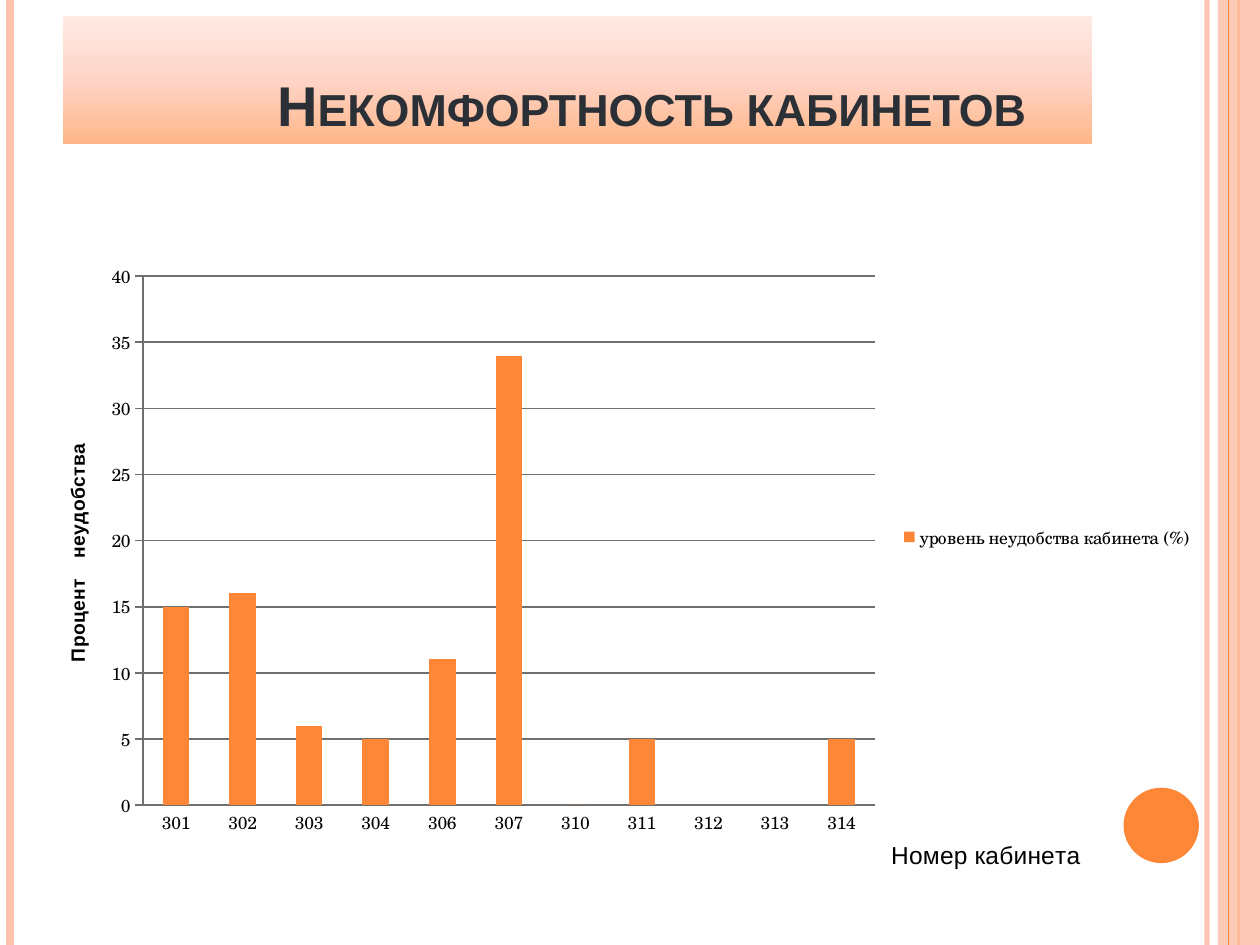
from copy import deepcopy
from dataclasses import dataclass
from typing import Optional

from lxml import etree
from pptx import Presentation
from pptx.chart.data import CategoryChartData
from pptx.dml.color import RGBColor
from pptx.enum.chart import XL_CHART_TYPE, XL_LEGEND_POSITION, XL_TICK_MARK
from pptx.enum.shapes import MSO_CONNECTOR, MSO_SHAPE
from pptx.enum.text import MSO_ANCHOR, PP_ALIGN
from pptx.oxml import parse_xml
from pptx.oxml.ns import nsdecls, qn
from pptx.util import Cm, Pt

COLUMNS = XL_CHART_TYPE.COLUMN_CLUSTERED
LEGEND_RIGHT = XL_LEGEND_POSITION.RIGHT
TICK_NONE, TICK_CROSS = XL_TICK_MARK.NONE, XL_TICK_MARK.CROSS
STRAIGHT = MSO_CONNECTOR.STRAIGHT
RECTANGLE, OVAL = MSO_SHAPE.RECTANGLE, MSO_SHAPE.OVAL
BOTTOM, CENTER = MSO_ANCHOR.BOTTOM, PP_ALIGN.CENTER
SLIDE_WIDTH, SLIDE_HEIGHT = 25.4, 19.05


@dataclass(frozen=True)
class Theme:
    accent: str = "FE8637"
    pale: str = "FEC3AE"
    heading: str = "2B2F36"
    ink: str = "000000"
    axis: str = "6F6F6F"
    banner: tuple = ((0, "FEB687"), (0.5, "FFD4C7"), (1, "FFEAE4"))
    heading_font: str = "Arial"
    chart_font: str = "TeX Gyre Schola"
    heading_size: int = 32
    chart_size: int = 10
    category_title_size: int = 14
    value_title_size: int = 11


@dataclass(frozen=True)
class Stripe:
    x: float
    color: str
    width: float
    opacity: Optional[int] = None


@dataclass(frozen=True)
class Block:
    kind: int
    left: float
    top: float
    width: float
    height: float
    color: str
    opacity: Optional[int] = None


THEME = Theme()
STRIPES_BEHIND = (
    Stripe(24.33, THEME.pale, 3, 93),
    Stripe(0.2, THEME.pale, 4.5),
    Stripe(24.97, THEME.accent, 1.5),
)
SIDE_BAND = Block(RECTANGLE, 24.55, 0, 0.85, SLIDE_HEIGHT, THEME.pale, 87)
STRIPE_IN_FRONT = Stripe(24.77, THEME.accent, 0.75)
CORNER_CIRCLE = Block(OVAL, 22.65, 15.88, 1.52, 1.52, THEME.accent)
BANNER = Block(RECTANGLE, 1.27, 0.32, 20.75, 2.59, THEME.pale)

DISCOMFORT = {
    "301": 15, "302": 16, "303": 6, "304": 5, "306": 11, "307": 34,
    "310": 0, "311": 5, "312": None, "313": None, "314": 5,
}


def apply_format(target, values: dict) -> None:
    for name, value in values.items():
        setattr(target, name, value)


def format_font(font, name: str, size: float, color: str, bold: bool = False) -> None:
    apply_format(font, {"name": name, "size": Pt(size), "bold": bold})
    font.color.rgb = RGBColor.from_string(color)


def set_opacity(element, percent: Optional[int]) -> None:
    if percent is not None:
        color = next(element.iter(qn("a:srgbClr")))
        etree.SubElement(color, qn("a:alpha"), val=str(percent * 1000))


def draw_stripe(slide, stripe: Stripe) -> None:
    x = Cm(stripe.x)
    connector = slide.shapes.add_connector(STRAIGHT, x, 0, x, Cm(SLIDE_HEIGHT))
    connector.line.color.rgb = RGBColor.from_string(stripe.color)
    connector.line.width = Pt(stripe.width)
    properties = connector._element.spPr
    set_opacity(properties, stripe.opacity)
    etree.SubElement(properties, qn("a:effectLst"))


def draw_block(slide, block: Block):
    box = (Cm(length) for length in (block.left, block.top, block.width, block.height))
    shape = slide.shapes.add_shape(block.kind, *box)
    shape.shadow.inherit = False
    shape.fill.solid()
    shape.fill.fore_color.rgb = RGBColor.from_string(block.color)
    set_opacity(shape._element.spPr, block.opacity)
    shape.line.fill.background()
    return shape


def draw_banner(slide) -> None:
    shape = draw_block(slide, BANNER)
    shape.fill.gradient()
    shape.fill.gradient_angle = 90
    stop_list = next(shape._element.spPr.iter(qn("a:gsLst")))
    stop_list.append(deepcopy(stop_list[0]))
    for stop, (position, color) in zip(shape.fill.gradient_stops, THEME.banner):
        stop.position = position
        stop.color.rgb = RGBColor.from_string(color)
    apply_format(shape.text_frame, {
        "word_wrap": True, "vertical_anchor": BOTTOM, "margin_left": Cm(3.23),
    })
    paragraph = shape.text_frame.paragraphs[0]
    paragraph.alignment = CENTER
    run = paragraph.add_run()
    run.text = "Некомфортность кабинетов"
    format_font(run.font, THEME.heading_font, THEME.heading_size, THEME.heading, True)
    run.font._element.set("cap", "small")


def place(parent, x: float, y: float, size: Optional[tuple] = None) -> None:
    """Fix the position of a chart part as fractions of the chart area."""
    for old in parent.findall(qn("c:layout")):
        parent.remove(old)
    entries = [("xMode", "edge"), ("yMode", "edge"), ("x", x), ("y", y)]
    if size:
        entries.insert(0, ("layoutTarget", "inner"))
        entries += zip("wh", size)
    body = "".join(f'<c:{tag} val="{value}"/>' for tag, value in entries)
    layout = parse_xml(f'<c:layout {nsdecls("c")}><c:manualLayout>{body}'
                       '</c:manualLayout></c:layout>')
    text = parent.find(qn("c:tx"))
    parent.insert(0 if text is None else parent.index(text) + 1, layout)


def title_axis(axis, words: list, size: float, bold: bool, x: float, y: float) -> None:
    """Write an axis title, with a widened gap between its words."""
    paragraph = axis.axis_title.text_frame.paragraphs[0]
    for index, word in enumerate(words):
        run = paragraph.add_run()
        run.text = word
        format_font(run.font, THEME.heading_font, size, THEME.ink, bold)
        if word == " ":
            run.font._element.set("spc", "900")
    place(axis.axis_title._element, x, y)


def draw_chart(slide) -> None:
    data = CategoryChartData()
    data.categories = list(DISCOMFORT)
    data.add_series("уровень неудобства кабинета (%)", list(DISCOMFORT.values()))
    chart = slide.shapes.add_chart(
        COLUMNS, Cm(0.5), Cm(3.32), Cm(23.8), Cm(15.01), data).chart
    format_font(chart.font, THEME.chart_font, THEME.chart_size, THEME.ink)
    apply_format(chart, {"has_title": False, "has_legend": True})
    apply_format(chart.legend, {"position": LEGEND_RIGHT, "include_in_layout": False})

    plot = chart.plots[0]
    apply_format(plot, {"gap_width": 150, "vary_by_categories": False})
    fill = plot.series[0].format.fill
    fill.solid()
    fill.fore_color.rgb = RGBColor.from_string(THEME.accent)
    place(chart._chartSpace.chart.plotArea, 0.1, 0.15, (0.62, 0.71))

    categories, values = chart.category_axis, chart.value_axis
    apply_format(categories, {"major_tick_mark": TICK_NONE})
    apply_format(values, {
        "major_tick_mark": TICK_CROSS, "has_major_gridlines": True,
        "minimum_scale": 0, "maximum_scale": 40, "major_unit": 5,
    })
    for part in (categories, values, values.major_gridlines):
        part.format.line.color.rgb = RGBColor.from_string(THEME.axis)
        part.format.line.width = Pt(1)
    title_axis(categories, ["Номер кабинета"], THEME.category_title_size, False, 0.73, 0.9)
    title_axis(values, ["Процент", " ", "неудобства"], THEME.value_title_size, True, 0.03, 0.37)


def main() -> None:
    presentation = Presentation()
    apply_format(presentation, {
        "slide_width": Cm(SLIDE_WIDTH), "slide_height": Cm(SLIDE_HEIGHT),
    })
    slide = presentation.slides.add_slide(presentation.slide_layouts[6])
    for stripe in STRIPES_BEHIND:
        draw_stripe(slide, stripe)
    draw_block(slide, SIDE_BAND)
    draw_stripe(slide, STRIPE_IN_FRONT)
    draw_block(slide, CORNER_CIRCLE)
    draw_banner(slide)
    draw_chart(slide)
    presentation.save("out.pptx")


if __name__ == "__main__":
    main()
